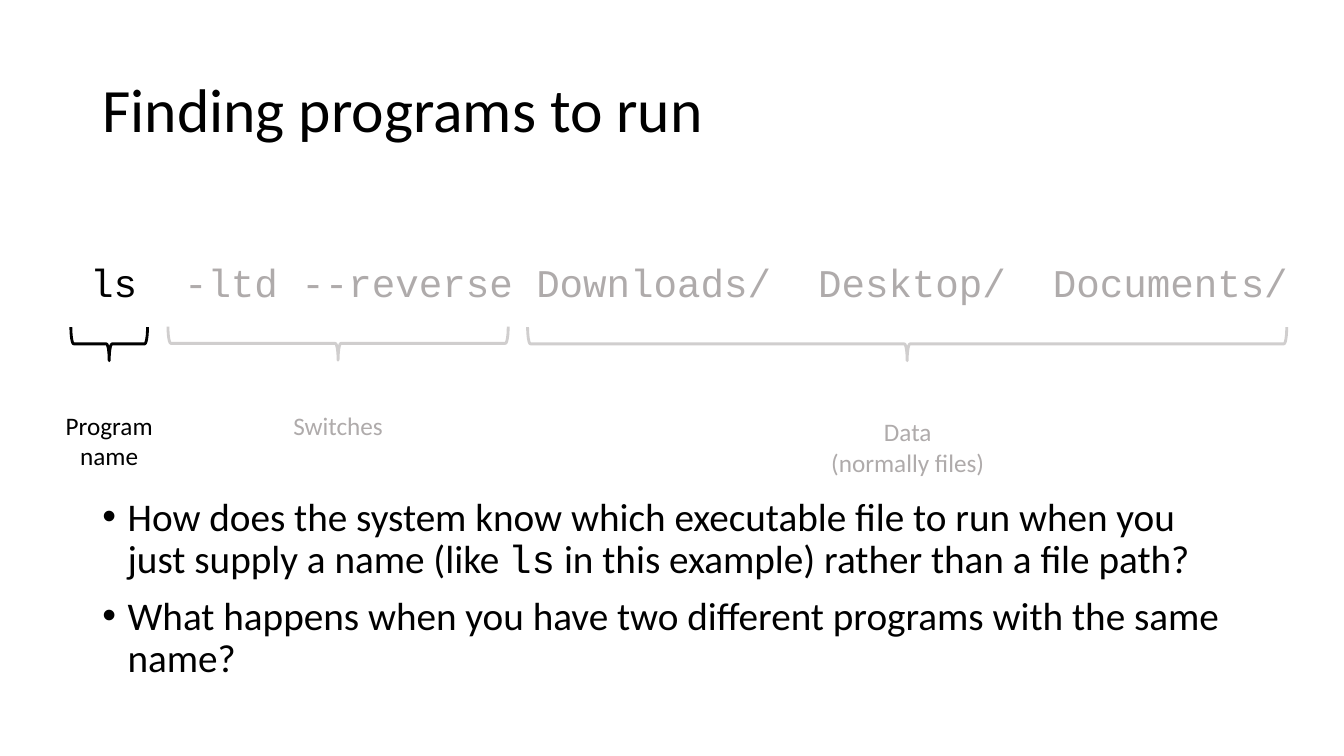
from pptx import Presentation
from pptx.dml.color import RGBColor
from pptx.enum.shapes import MSO_SHAPE
from pptx.enum.text import MSO_ANCHOR, MSO_AUTO_SIZE, PP_ALIGN
from pptx.util import Emu, Pt

PX = 9525  # EMU per px, 96 px to the inch
BLACK = RGBColor(0x00, 0x00, 0x00)
MUTED_TEXT = RGBColor(0xAF, 0xAB, 0xAB)
MUTED_LINE = RGBColor(0xD0, 0xCE, 0xCE)
TEXT_FONT = "Calibri"
CODE_FONT = "Courier New"


def box(left, top, width, height):
    """Turn a px rectangle into EMU lengths."""
    return [Emu(length * PX) for length in (left, top, width, height)]


def add_run(paragraph, text, size, font=TEXT_FONT, color=BLACK):
    run = paragraph.add_run()
    run.text = text
    run.font.size = Pt(size)
    run.font.name = font
    run.font.color.rgb = color


presentation = Presentation()
presentation.slide_width = Emu(1280 * PX)
presentation.slide_height = Emu(720 * PX)
slide = presentation.slides.add_slide(presentation.slide_layouts[1])

# Title
title = slide.shapes.title
title.left, title.top, title.width, title.height = box(88, 38, 1104, 139)
title.text_frame.auto_size = MSO_AUTO_SIZE.NONE
title.text_frame.vertical_anchor = MSO_ANCHOR.MIDDLE
paragraph = title.text_frame.paragraphs[0]
paragraph.alignment = PP_ALIGN.LEFT
paragraph.line_spacing = 0.9
add_run(paragraph, "Finding programs to run", 44)

# Questions
questions = [
    [
        ("How does the system know which executable file to run when you just supply a name (like ", TEXT_FONT),
        ("ls", CODE_FONT),
        (" in this example) rather than a file path?", TEXT_FONT),
    ],
    [("What happens when you have two different programs with the same name?", TEXT_FONT)],
]
body = slide.placeholders[1]
body.left, body.top, body.width, body.height = box(88, 469, 1104, 215)
body.text_frame.auto_size = MSO_AUTO_SIZE.NONE
for index, question in enumerate(questions):
    paragraph = body.text_frame.paragraphs[0] if index == 0 else body.text_frame.add_paragraph()
    paragraph.line_spacing = 0.9
    paragraph.space_before = Pt(10)
    properties = paragraph._p.get_or_add_pPr()
    properties.set("marL", str(24 * PX))
    properties.set("indent", str(-24 * PX))
    for text, font in question:
        add_run(paragraph, text, 28, font)

# Command line
command = slide.shapes.add_textbox(*box(54, 241, 1192, 55))
command.text_frame.word_wrap = False
command.text_frame.auto_size = MSO_AUTO_SIZE.SHAPE_TO_FIT_TEXT
paragraph = command.text_frame.paragraphs[0]
add_run(paragraph, " ls  ", 28, CODE_FONT)
add_run(paragraph, "-ltd --reverse Downloads/  Desktop/  Documents/", 28, CODE_FONT, MUTED_TEXT)

# Braces with the label of each part centred below
BRACE_MIDDLE, BRACE_DEPTH = 327, 32
parts = [
    # centre, brace length, label top, width, height, lines, line colour, text colour
    (104, 73, 386, 172, 113, ["Program", "name"], BLACK, BLACK),
    (322, 324, 386, 106, 38, ["Switches"], MUTED_LINE, MUTED_TEXT),
    (864, 723, 392, 167, 68, ["Data", "(normally files)"], MUTED_LINE, MUTED_TEXT),
]
for center, length, top, width, height, lines, line_color, text_color in parts:
    brace = slide.shapes.add_shape(
        MSO_SHAPE.LEFT_BRACE,
        *box(center - BRACE_DEPTH // 2, BRACE_MIDDLE - length // 2, BRACE_DEPTH, length),
    )
    brace.rotation = 270
    brace.shadow.inherit = False
    brace.fill.background()
    brace.line.color.rgb = line_color
    brace.line.width = Pt(2)

    label = slide.shapes.add_textbox(*box(center - width // 2, top, width, height))
    label.text_frame.word_wrap = False
    label.text_frame.auto_size = MSO_AUTO_SIZE.SHAPE_TO_FIT_TEXT
    for index, line in enumerate(lines):
        paragraph = label.text_frame.paragraphs[0] if index == 0 else label.text_frame.add_paragraph()
        paragraph.alignment = PP_ALIGN.CENTER
        add_run(paragraph, line, 18, color=text_color)

presentation.save("out.pptx")
